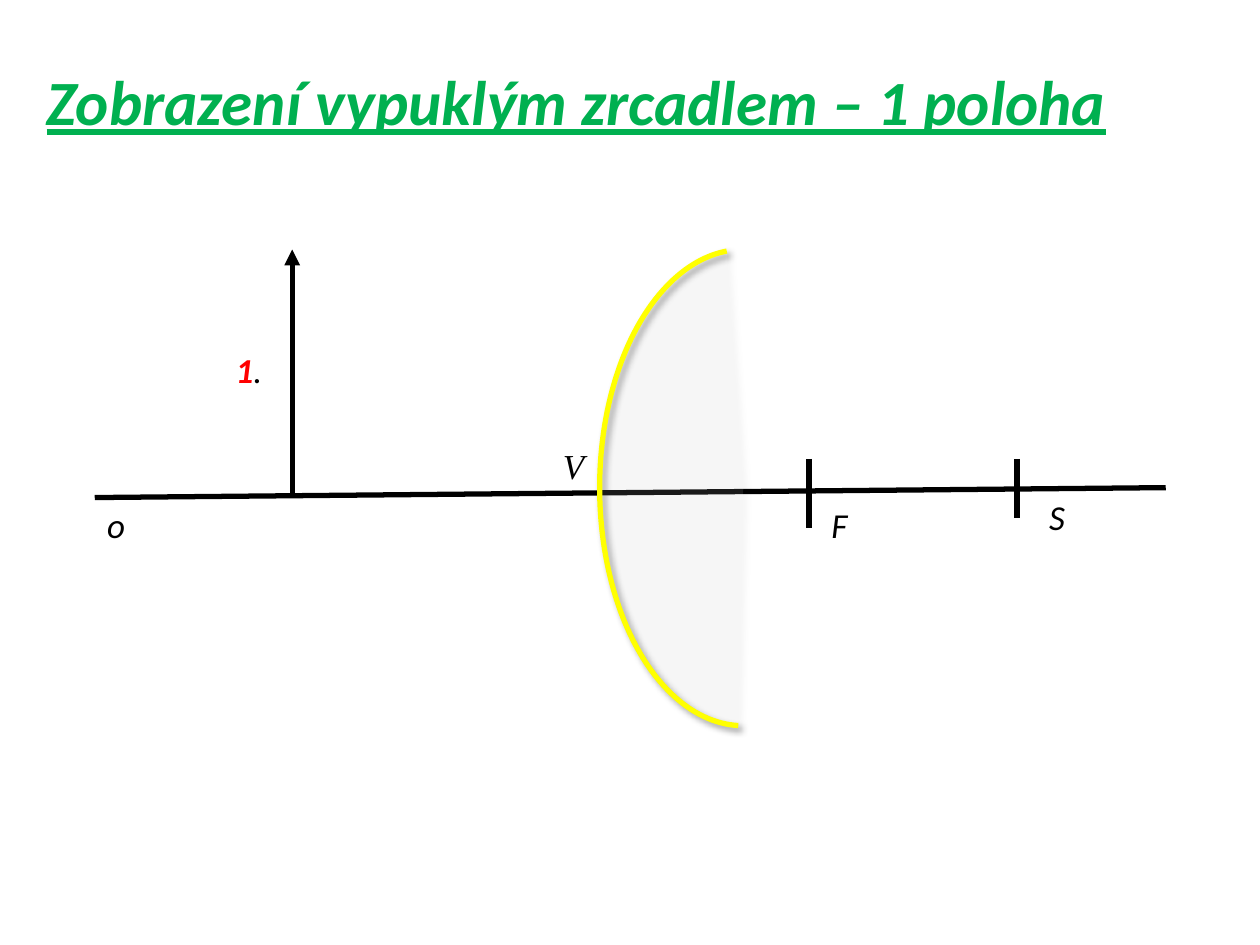
from lxml import etree
from pptx import Presentation
from pptx.dml.color import RGBColor
from pptx.enum.shapes import MSO_CONNECTOR, MSO_SHAPE
from pptx.enum.text import MSO_ANCHOR
from pptx.oxml import parse_xml
from pptx.oxml.ns import nsdecls, qn
from pptx.util import Cm, Pt

ARC = MSO_SHAPE.ARC
STRAIGHT = MSO_CONNECTOR.STRAIGHT
MIDDLE = MSO_ANCHOR.MIDDLE
TOP = MSO_ANCHOR.TOP

BLACK = RGBColor(0x00, 0x00, 0x00)
GREEN = RGBColor(0x00, 0xB0, 0x50)
RED = RGBColor(0xFF, 0x00, 0x00)
WHITE = RGBColor(0xFF, 0xFF, 0xFF)
YELLOW = RGBColor(0xFF, 0xFF, 0x00)

SHADOW = (
    f'<a:outerShdw {nsdecls("a")} blurRad="50800" dist="38100" dir="2700000" '
    'algn="tl" rotWithShape="0"><a:srgbClr val="000000"><a:alpha val="40000"/>'
    '</a:srgbClr></a:outerShdw>'
)


class Diagram:
    """Draws an optics diagram on one slide in a single style."""

    font = "Calibri"
    label_size = Pt(20)
    line_width = Pt(3)

    def __init__(self, slide):
        self.s = slide

    def text(self, runs, x, y, w, h, size, font=None, anchor=TOP):
        tf = self.s.shapes.add_textbox(Cm(x), Cm(y), Cm(w), Cm(h)).text_frame
        tf.word_wrap = True
        tf.vertical_anchor = anchor
        p = tf.paragraphs[0]
        p.font.name = font or self.font
        p.font.size = size
        p.font.italic = True
        for content, color, bold in runs:
            r = p.add_run()
            r.text = content
            r.font.color.rgb = color
            r.font.bold = bold
        return p

    def title(self, content, x, y, w, h):
        p = self.text([(content, GREEN, True)], x, y, w, h, Pt(36), anchor=MIDDLE)
        p.font.underline = True

    def label(self, runs, x, y, w=1.19, font=None):
        self.text(runs, x, y, w, 1.12, self.label_size, font)

    def line(self, x1, y1, x2, y2, arrow=False):
        sp = self.s.shapes.add_connector(STRAIGHT, Cm(x1), Cm(y1), Cm(x2), Cm(y2))
        sp.line.color.rgb = BLACK
        sp.line.width = self.line_width
        if arrow:
            etree.SubElement(sp.line._get_or_add_ln(), qn("a:tailEnd"), type="triangle")
        etree.SubElement(sp._element.spPr, qn("a:effectLst"))

    def mirror(self, x, y, w, h, start, end):
        sp = self.s.shapes.add_shape(ARC, Cm(x), Cm(y), Cm(w), Cm(h))
        for i, degrees in enumerate((start, end)):
            sp.adjustments[i] = degrees * 0.6
        sp.fill.solid()
        sp.fill.fore_color.rgb = WHITE
        color = sp._element.spPr.find(".//" + qn("a:srgbClr"))
        etree.SubElement(color, qn("a:alpha"), val="10000")
        sp.line.color.rgb = YELLOW
        sp.line.width = self.line_width
        sp.shadow.inherit = False
        sp._element.spPr.find(qn("a:effectLst")).append(parse_xml(SHADOW))


def main():
    prs = Presentation()
    prs.slide_width, prs.slide_height = Cm(25.4), Cm(19.05)
    d = Diagram(prs.slides.add_slide(prs.slide_layouts[6]))

    d.title("Zobrazení vypuklým zrcadlem – 1 poloha", 0.69, 1.32, 24, 1.4)

    d.label([("o", BLACK, False)], 1.91, 10.03, 0.87)
    d.label([("F", BLACK, False)], 16.51, 10.03)
    d.label([("S", BLACK, False)], 20.9, 9.86)
    d.label([("V", BLACK, False)], 11.1, 8.84, font="Times New Roman")
    d.label([("1", RED, True), (".", BLACK, False)], 4.5, 6.91, 1.37)

    for x, bottom in ((16.31, 10.64), (20.5, 10.44)):
        d.line(x, 9.25, x, bottom)
    d.line(5.89, 10.03, 5.89, 5.03, arrow=True)
    d.line(1.91, 10.03, 23.5, 9.83)
    d.mirror(12.09, 5.03, 5.79, 9.6, 91.2, 266)

    prs.save("out.pptx")


if __name__ == "__main__":
    main()
